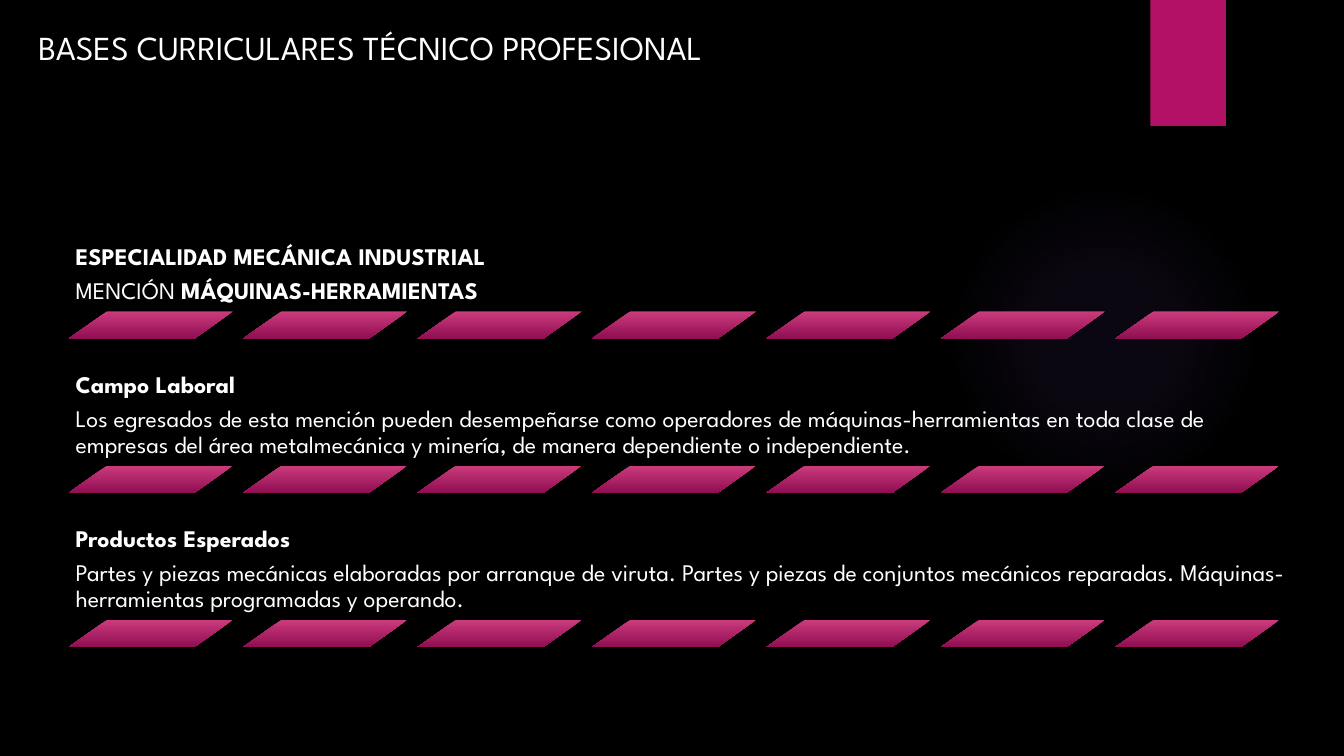
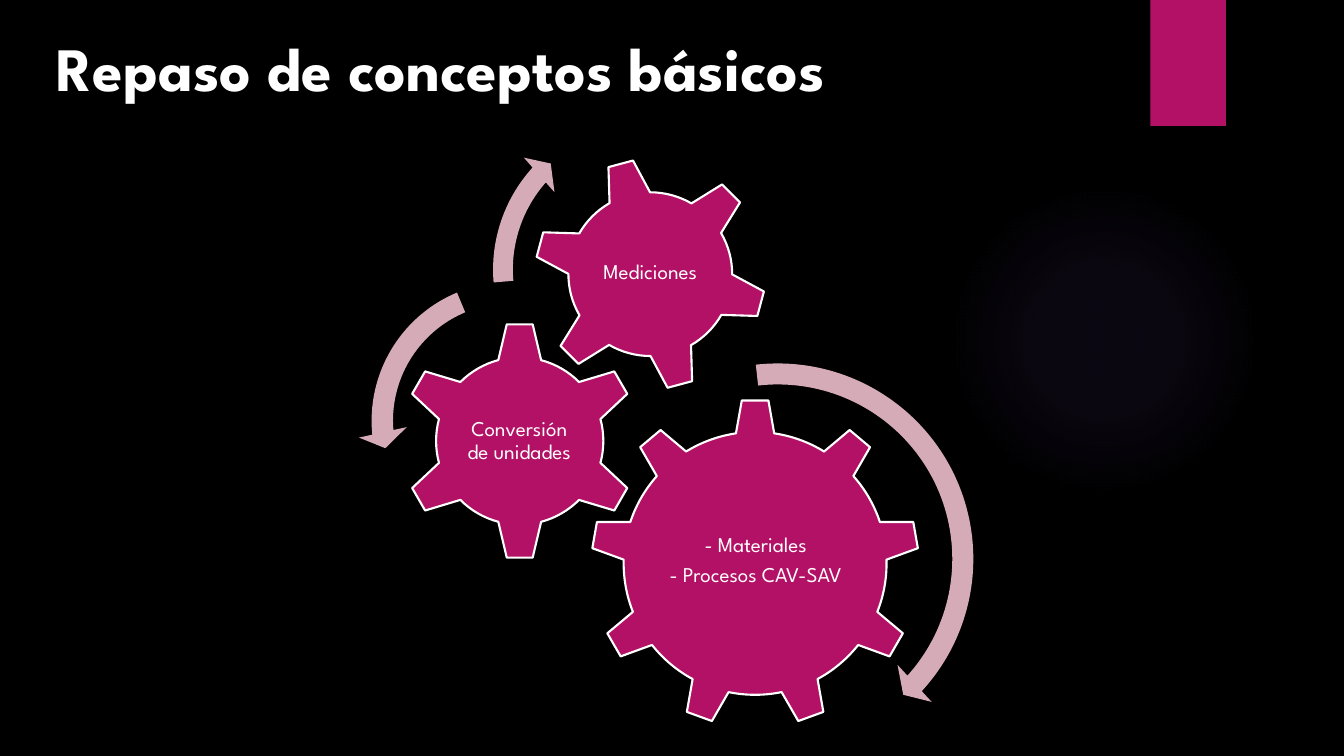
"""Build two slides on the industrial mechanics speciality."""
from pptx import Presentation
from pptx.dml.color import RGBColor
from pptx.enum.shapes import MSO_SHAPE, PP_PLACEHOLDER
from pptx.enum.text import MSO_ANCHOR, MSO_AUTO_SIZE, PP_ALIGN
from pptx.oxml import parse_xml
from pptx.oxml.ns import nsdecls
from pptx.util import Pt

PX = 9144
FONT = "League Spartan"
COLORS = {
    "background": "000000",
    "text": "FFFFFF",
    "accent": "B31166",
    "band_top": "CB3B7C",
    "band_bottom": "900E52",
    "arrow": "D6ABB8",
    "glow": "9B6BF2",
}
GLOW_STOPS = [(0, 7), (36, 6), (69, 0)]
BAND_COUNT, BAND_PITCH, ROW_PITCH = 7, 173, 153

SECTIONS = [
    [[("ESPECIALIDAD MECÁNICA INDUSTRIAL", True)],
     [("MENCIÓN ", False), ("MÁQUINAS-HERRAMIENTAS", True)]],
    [[("Campo Laboral", True)],
     [("Los egresados de esta mención pueden desempeñarse como operadores de "
       "máquinas-herramientas en toda clase de empresas del área metalmecánica "
       "y minería, de manera dependiente o independiente.", False)]],
    [[("Productos Esperados", True)],
     [("Partes y piezas mecánicas elaboradas por arranque de viruta. Partes y "
       "piezas de conjuntos mecánicos reparadas. Máquinas-herramientas "
       "programadas y operando.", False)]],
]
GEARS = [
    (MSO_SHAPE.GEAR_9, (586, 396, 326, 326), 0,
     (652, 472, 195, 168), ["- Materiales", "- Procesos CAV-SAV"]),
    (MSO_SHAPE.GEAR_6, (397, 319, 237, 237), 0,
     (456, 379, 118, 117), ["Conversión de unidades"]),
    (MSO_SHAPE.GEAR_6, (529, 156, 232, 232), 345,
     (580, 206, 130, 130), ["Mediciones"]),
]
ARROWS = [
    (MSO_SHAPE.CIRCULAR_ARROW, (563, 346, 417, 417),
     (0.05, 2.99, 25.39, 158.12, 0.06)),
    (MSO_SHAPE.LEFT_CIRCULAR_ARROW, (355, 266, 303, 303),
     (0.07, 4.3, 104.89, 148.38, 0.08)),
    (MSO_SHAPE.CIRCULAR_ARROW, (476, 104, 327, 327),
     (0.06, 3.94, 133.14, 105.08, 0.07)),
]


def scaled(frame):
    """Turn px lengths into EMU."""
    return [length * PX for length in frame]


def color(name):
    """Look up a colour of the palette."""
    return RGBColor.from_string(COLORS[name])


def add_figure(page, kind, frame, fill, outline=None):
    """Add a flat preset shape, outlined when a colour is given."""
    shape = page.shapes.add_shape(kind, *scaled(frame))
    shape.shadow.inherit = False
    shape.fill.solid()
    shape.fill.fore_color.rgb = color(fill)
    if outline:
        shape.line.color.rgb = color(outline)
        shape.line.width = Pt(1.5)
    else:
        shape.line.fill.background()
    return shape


def write(box, paragraphs, size, inset=7, anchor=MSO_ANCHOR.BOTTOM,
          align=PP_ALIGN.LEFT):
    """Fill a box with paragraphs made of (text, bold) spans."""
    frame = box.text_frame
    frame.word_wrap = True
    frame.auto_size = MSO_AUTO_SIZE.NONE
    frame.vertical_anchor = anchor
    frame.margin_left = frame.margin_right = inset * PX
    frame.margin_top = frame.margin_bottom = inset * PX
    for index, spans in enumerate(paragraphs):
        para = frame.add_paragraph() if index else frame.paragraphs[0]
        para.alignment = align
        para.line_spacing = 0.9
        para.space_after = Pt(round(size * 0.35))
        para.font.name = FONT
        para.font.size = Pt(size)
        para.font.color.rgb = color("text")
        for text, bold in spans:
            span = para.add_run()
            span.text = text
            span.font.bold = bold


def add_text(page, frame, paragraphs, size, **style):
    """Add a text box."""
    write(page.shapes.add_textbox(*scaled(frame)), paragraphs, size, **style)


def set_title(page, frame, text, size, bold, **style):
    """Move the title placeholder and fill it."""
    title = page.shapes.title
    title.left, title.top, title.width, title.height = scaled(frame)
    write(title, [[(text, bold)]], size, **style)


def add_glow(page):
    """Add the faint round glow."""
    glow = add_figure(page, MSO_SHAPE.OVAL, (941, 183, 308, 308), "glow")
    stops = "".join(
        f'<a:gs pos="{position * 1000}"><a:srgbClr val="{COLORS["glow"]}">'
        f'<a:alpha val="{alpha * 1000}"/></a:srgbClr></a:gs>'
        for position, alpha in GLOW_STOPS)
    gradient = parse_xml(
        f'<a:gradFill {nsdecls("a")}><a:gsLst>{stops}</a:gsLst>'
        '<a:path path="circle"><a:fillToRect l="50000" t="50000" '
        'r="50000" b="50000"/></a:path></a:gradFill>')
    properties = glow._element.spPr
    properties.replace(properties.find("{*}solidFill"), gradient)
    return glow


def dress_layout(deck, layout):
    """Give the layout its background, glow and tab, keeping only the title."""
    deck.slide_master.background.fill.solid()
    deck.slide_master.background.fill.fore_color.rgb = color("background")
    for holder in list(layout.placeholders):
        if holder.placeholder_format.type != PP_PLACEHOLDER.TITLE:
            holder._element.getparent().remove(holder._element)


def add_decor(page):
    """Draw the glow and tab, then hand them over to the layout."""
    tab = add_figure(page, MSO_SHAPE.RECTANGLE, (1141, 0, 75, 125), "accent")
    for shape in (add_glow(page), tab):
        page.slide_layout.shapes._spTree.append(shape._element)


def add_bands(page, top):
    """Add one row of slanted bands."""
    for column in range(BAND_COUNT):
        frame = (68 + BAND_PITCH * column, top, 163, 27)
        band = add_figure(page, MSO_SHAPE.PARALLELOGRAM, frame, "accent")
        band.adjustments[0] = 1.41
        band.fill.gradient()
        band.fill.gradient_angle = 270
        names = ("band_top", "band_bottom")
        for position, (stop, name) in enumerate(zip(band.fill.gradient_stops, names)):
            stop.position = position
            stop.color.rgb = color(name)


def build_curriculum(page):
    """Show the speciality, its field of work and its products."""
    set_title(page, (28, 24, 785, 50), "BASES CURRICULARES TÉCNICO PROFESIONAL",
              24, False, anchor=MSO_ANCHOR.MIDDLE, inset=10)
    for row, paragraphs in enumerate(SECTIONS):
        add_text(page, (68, 198 + ROW_PITCH * row, 1226, 111), paragraphs, 17)
        add_bands(page, 309 + ROW_PITCH * row)


def build_review(page):
    """Show the basic concepts as meshing gears."""
    set_title(page, (49, 0, 918, 111), "Repaso de conceptos básicos", 44, True)
    for kind, frame, rotation, label_frame, lines in GEARS:
        gear = add_figure(page, kind, frame, "accent", "text")
        gear.rotation = rotation
        add_text(page, label_frame, [[(line, False)] for line in lines], 15,
                 inset=2, anchor=MSO_ANCHOR.MIDDLE, align=PP_ALIGN.CENTER)
    for kind, frame, adjustments in ARROWS:
        arrow = add_figure(page, kind, frame, "arrow")
        for index, value in enumerate(adjustments):
            arrow.adjustments[index] = value


def main():
    """Build and save the deck."""
    deck = Presentation()
    deck.slide_width, deck.slide_height = scaled((1333, 750))
    layout = deck.slide_layouts[5]
    dress_layout(deck, layout)
    curriculum = deck.slides.add_slide(layout)
    add_decor(curriculum)
    build_curriculum(curriculum)
    build_review(deck.slides.add_slide(layout))
    deck.save("out.pptx")


if __name__ == "__main__":
    main()
